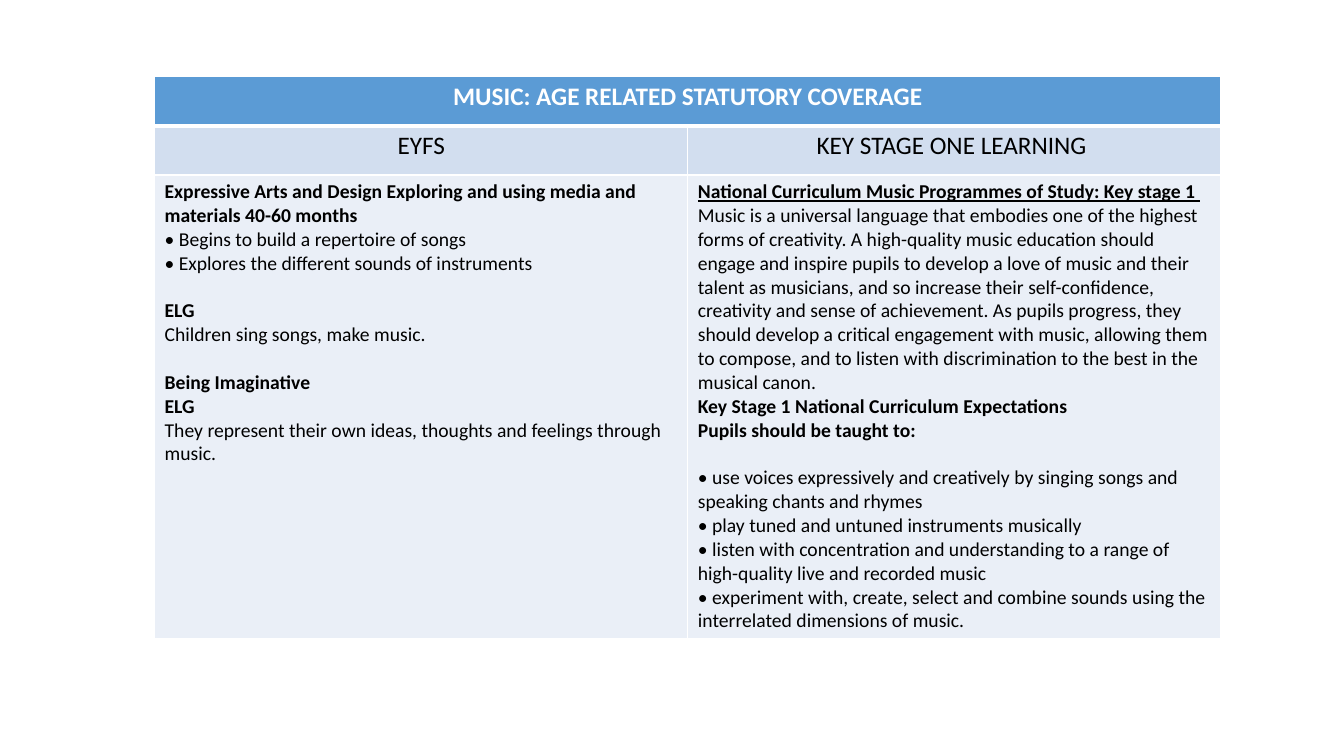
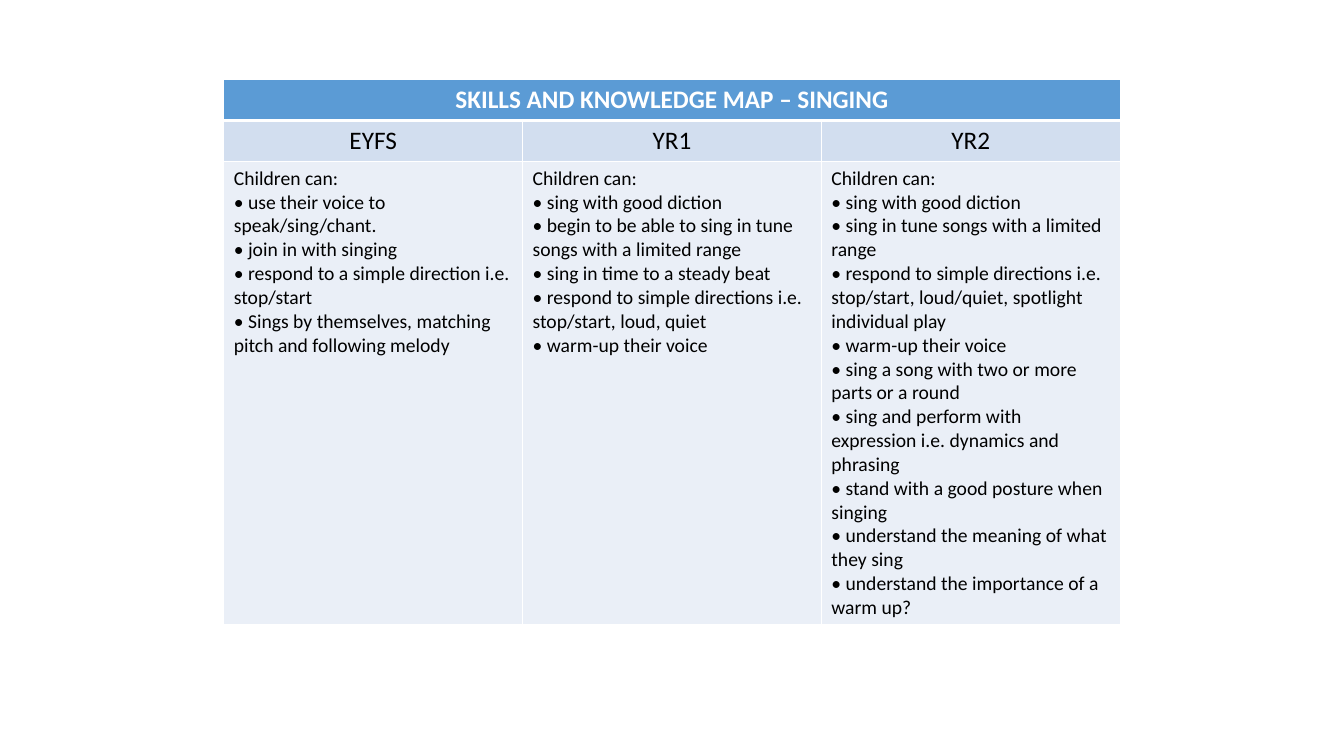
import pptx
import pptx.dml.color
import pptx.enum.text
import pptx.oxml
import pptx.oxml.ns
import pptx.util

SLIDE_WIDTH = pptx.util.Inches(13.33)
SLIDE_HEIGHT = pptx.util.Inches(7.5)
BLANK_LAYOUT = 6

WHITE = pptx.dml.color.RGBColor(0xFF, 0xFF, 0xFF)
BLACK = pptx.dml.color.RGBColor(0x00, 0x00, 0x00)
TITLE_BLUE = pptx.dml.color.RGBColor(0x5B, 0x9B, 0xD5)
HEADING_BLUE = pptx.dml.color.RGBColor(0xD2, 0xDE, 0xEF)
BODY_BLUE = pptx.dml.color.RGBColor(0xEA, 0xEF, 0xF7)

FONT = "Calibri"
HEADING_SIZE = pptx.util.Pt(18)
BODY_SIZE = pptx.util.Pt(14)
SECTION_GAP = pptx.util.Pt(17)
THIN_BORDER = pptx.util.Pt(1)
TITLE_BORDER = pptx.util.Pt(3)


def across(percent):
    return round(SLIDE_WIDTH * percent / 100)


def down(percent):
    return round(SLIDE_HEIGHT * percent / 100)


def plain(text):
    return {"text": text}


def bold(text, **style):
    return {"text": text, "bold": True, **style}


def bullets(*items):
    return [plain(f"• {item}") for item in items]


def children_can(*skills):
    return [plain("Children can:"), *bullets(*skills)]


def add_border(cell, side, width):
    """Draw a white line on one side (L, R, T or B) of a cell."""
    line = pptx.oxml.parse_xml(
        f'<a:ln{side} {pptx.oxml.ns.nsdecls("a")} w="{width}"><a:solidFill>'
        f'<a:srgbClr val="{WHITE}"/></a:solidFill></a:ln{side}>'
    )
    cell._tc.get_or_add_tcPr().append(line)


def style_cell(cell, row_index, fill):
    title_side = {0: "B", 1: "T"}.get(row_index)
    for side in "LRTB":
        add_border(cell, side, TITLE_BORDER if side == title_side else THIN_BORDER)
    cell.fill.solid()
    cell.fill.fore_color.rgb = fill


def add_run(paragraph, text, size, color=BLACK, bold=False, underline=False):
    run = paragraph.add_run()
    run.text = text
    run.font.name = FONT
    run.font.size = size
    run.font.color.rgb = color
    run.font.bold = bold
    run.font.underline = underline


def write_heading(cell, text, **style):
    paragraph = cell.text_frame.paragraphs[0]
    paragraph.alignment = pptx.enum.text.PP_ALIGN.CENTER
    add_run(paragraph, text, HEADING_SIZE, **style)


def write_sections(cell, sections):
    """Write groups of paragraphs, one line apart."""
    paragraph = cell.text_frame.paragraphs[0]
    for section_index, section in enumerate(sections):
        for entry_index, entry in enumerate(section):
            if section_index or entry_index:
                paragraph = cell.text_frame.add_paragraph()
            if section_index and not entry_index:
                paragraph.space_before = SECTION_GAP
            add_run(paragraph, size=BODY_SIZE, **entry)


def add_coverage_slide(presentation, title, columns, left, top, width, row_heights):
    """Add a slide with one table; columns maps each heading to its sections."""
    slide = presentation.slides.add_slide(presentation.slide_layouts[BLANK_LAYOUT])
    frame = slide.shapes.add_table(
        len(row_heights), len(columns),
        across(left), down(top), across(width), down(sum(row_heights)),
    )
    table = frame.table
    fills = (TITLE_BLUE, HEADING_BLUE, BODY_BLUE)
    for row_index, (height, fill) in enumerate(zip(row_heights, fills)):
        table.rows[row_index].height = down(height)
        for cell in table.rows[row_index].cells:
            style_cell(cell, row_index, fill)

    table.cell(0, 0).merge(table.cell(0, len(columns) - 1))
    write_heading(table.cell(0, 0), title, color=WHITE, bold=True)
    for column_index, (heading, sections) in enumerate(columns.items()):
        write_heading(table.cell(1, column_index), heading)
        write_sections(table.cell(2, column_index), sections)


STATUTORY_COVERAGE = {
    "EYFS": [
        [
            bold("Expressive Arts and Design Exploring and using media and "
                 "materials 40-60 months"),
            *bullets("Begins to build a repertoire of songs",
                     "Explores the different sounds of instruments"),
        ],
        [bold("ELG"), plain("Children sing songs, make music.")],
        [
            bold("Being Imaginative"),
            bold("ELG"),
            plain("They represent their own ideas, thoughts and feelings "
                  "through music."),
        ],
    ],
    "KEY STAGE ONE LEARNING ": [
        [
            bold("National Curriculum Music Programmes of Study: Key stage 1 ",
                 underline=True),
            plain("Music is a universal language that embodies one of the highest "
                  "forms of creativity. A high-quality music education should "
                  "engage and inspire pupils to develop a love of music and their "
                  "talent as musicians, and so increase their self-confidence, "
                  "creativity and sense of achievement. As pupils progress, they "
                  "should develop a critical engagement with music, allowing them "
                  "to compose, and to listen with discrimination to the best in "
                  "the musical canon."),
            bold("Key Stage 1 National Curriculum Expectations"),
            bold("Pupils should be taught to:"),
        ],
        bullets(
            "use voices expressively and creatively by singing songs and "
            "speaking chants and rhymes",
            "play tuned and untuned instruments musically",
            "listen with concentration and understanding to a range of "
            "high-quality live and recorded music",
            "experiment with, create, select and combine sounds using the "
            "interrelated dimensions of music.",
        ),
    ],
}

SINGING_SKILLS = {
    "EYFS": [children_can(
        "use their voice to speak/sing/chant.",
        "join in with singing",
        "respond to a simple direction i.e. stop/start",
        "Sings by themselves, matching pitch and following melody",
    )],
    "YR1": [children_can(
        "sing with good diction",
        "begin to be able to sing in tune songs with a limited range",
        "sing in time to a steady beat",
        "respond to simple directions i.e. stop/start, loud, quiet",
        "warm-up their voice",
    )],
    "YR2": [children_can(
        "sing with good diction",
        "sing in tune songs with a limited range",
        "respond to simple directions i.e. stop/start, loud/quiet, spotlight "
        "individual play",
        "warm-up their voice",
        "sing a song with two or more parts or a round",
        "sing and perform with expression i.e. dynamics and phrasing",
        "stand with a good posture when singing",
        "understand the meaning of what they sing",
        "understand the importance of a warm up?",
    )],
}


def main():
    presentation = pptx.Presentation()
    presentation.slide_width = SLIDE_WIDTH
    presentation.slide_height = SLIDE_HEIGHT
    add_coverage_slide(
        presentation, "MUSIC: AGE RELATED STATUTORY COVERAGE", STATUTORY_COVERAGE,
        left=11.5, top=10.15, width=79.35, row_heights=(6.5, 6.5, 60.5),
    )
    add_coverage_slide(
        presentation, "SKILLS AND KNOWLEDGE MAP – SINGING", SINGING_SKILLS,
        left=16.65, top=10.55, width=66.7, row_heights=(5.4, 5.4, 60.4),
    )
    presentation.save("out.pptx")


if __name__ == "__main__":
    main()
